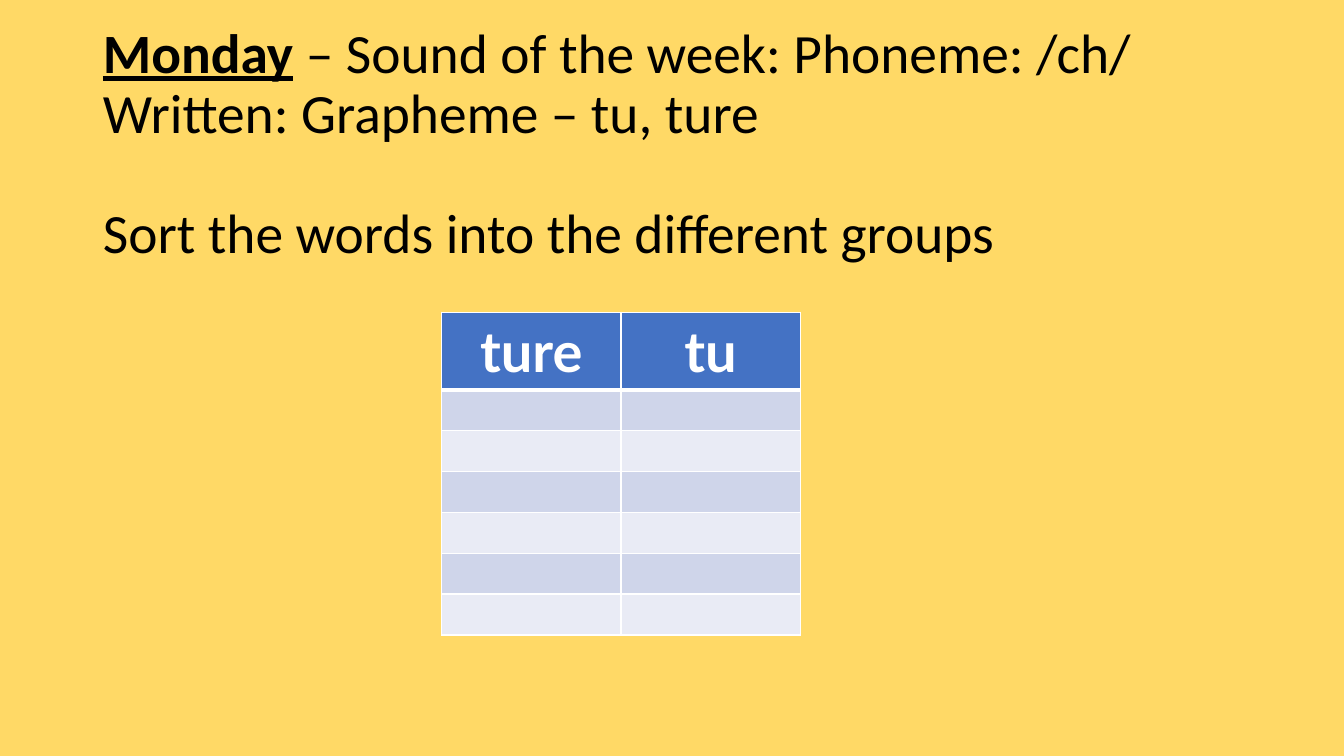
from dataclasses import dataclass

from lxml.etree import SubElement
from pptx import Presentation
from pptx.dml.color import RGBColor
from pptx.enum.text import MSO_ANCHOR as Anchor, MSO_AUTO_SIZE as AutoSize, PP_ALIGN as Align
from pptx.oxml.ns import qn
from pptx.util import Cm, Pt

COLOURS = {
    "background": "FFD966",
    "title": "000000",
    "header": "4472C4",
    "light": "FFFFFF",
    "odd_row": "CFD5EA",
    "even_row": "E9EBF5",
}
GRAPHEMES = ("ture", "tu")
WORD_ROWS = 6
COLUMN_WIDTH, HEADER_HEIGHT, WORD_HEIGHT = 4.52, 1.92, 1.03


@dataclass(frozen=True)
class Phrase:
    text: str
    size: float
    font: str
    colour: str
    strong: bool = False
    underlined: bool = False


@dataclass(frozen=True)
class TitleLine:
    phrases: tuple[Phrase, ...]
    gap_before: float = 0


def title_phrase(text: str, emphasis: bool = False) -> Phrase:
    """Describe a piece of the title."""
    return Phrase(text, 39.6, "Calibri", "title", emphasis, emphasis)


TITLE_LINES = (
    TitleLine((title_phrase("Monday", True), title_phrase(" – Sound of the week: Phoneme: /ch/"))),
    TitleLine((title_phrase("Written: Grapheme – tu, ture"),)),
    TitleLine((title_phrase("Sort the words into the different groups"),), 43.5),
)


def rgb(name: str) -> RGBColor:
    """Look up a colour by its role."""
    return RGBColor.from_string(COLOURS[name])


def add_phrase(paragraph, phrase: Phrase) -> None:
    """Append one formatted run."""
    run = paragraph.add_run()
    run.text = phrase.text
    font = run.font
    font.name, font.size = phrase.font, Pt(phrase.size)
    font.bold, font.underline = phrase.strong, phrase.underlined
    font.color.rgb = rgb(phrase.colour)


def write_title(title) -> None:
    """Place the title and write its lines."""
    title.left, title.top, title.width, title.height = Cm(2.34), Cm(1.83), Cm(29.21), Cm(3.68)
    frame = title.text_frame
    frame.word_wrap = True
    frame.auto_size = AutoSize.NONE
    frame.vertical_anchor = Anchor.MIDDLE
    for index, line in enumerate(TITLE_LINES):
        paragraph = frame.add_paragraph() if index else frame.paragraphs[0]
        paragraph.alignment = Align.LEFT
        paragraph.line_spacing = 0.9
        paragraph.space_before = Pt(line.gap_before)
        for phrase in line.phrases:
            add_phrase(paragraph, phrase)


def style_cell(cell, fill: str, top: float, bottom: float) -> None:
    """Give a cell its borders and its fill."""
    properties = cell._tc.get_or_add_tcPr()
    for side, width in (("L", 1), ("R", 1), ("T", top), ("B", bottom)):
        border = SubElement(properties, qn(f"a:ln{side}"), w=str(Pt(width)))
        border_fill = SubElement(border, qn("a:solidFill"))
        SubElement(border_fill, qn("a:srgbClr"), val=COLOURS["light"])
    cell.fill.solid()
    cell.fill.fore_color.rgb = rgb(fill)


def add_sorting_table(slide) -> None:
    """Add the table with one column for each grapheme."""
    sorting = slide.shapes.add_table(
        WORD_ROWS + 1, len(GRAPHEMES), Cm(11.13), Cm(7.87),
        Cm(COLUMN_WIDTH * len(GRAPHEMES)), Cm(HEADER_HEIGHT + WORD_ROWS * WORD_HEIGHT),
    ).table
    for column in sorting.columns:
        column.width = Cm(COLUMN_WIDTH)
    for index, row in enumerate(sorting.rows):
        row.height = Cm(WORD_HEIGHT if index else HEADER_HEIGHT)
        band = "odd_row" if index % 2 else "even_row"
        for cell in row.cells:
            style_cell(cell, band if index else "header", 3 if index == 1 else 1, 1 if index else 3)
    for column_index, grapheme in enumerate(GRAPHEMES):
        paragraph = sorting.cell(0, column_index).text_frame.paragraphs[0]
        paragraph.alignment = Align.CENTER
        add_phrase(paragraph, Phrase(grapheme, 40, "Lato", "light", True))


def main() -> None:
    """Build and save the slide."""
    deck = Presentation()
    deck.slide_width, deck.slide_height = Cm(33.87), Cm(19.05)
    slide = deck.slides.add_slide(deck.slide_layouts.get_by_name("Title Only"))
    slide.background.fill.solid()
    slide.background.fill.fore_color.rgb = rgb("background")
    write_title(slide.shapes.title)
    add_sorting_table(slide)
    deck.save("out.pptx")


if __name__ == "__main__":
    main()
